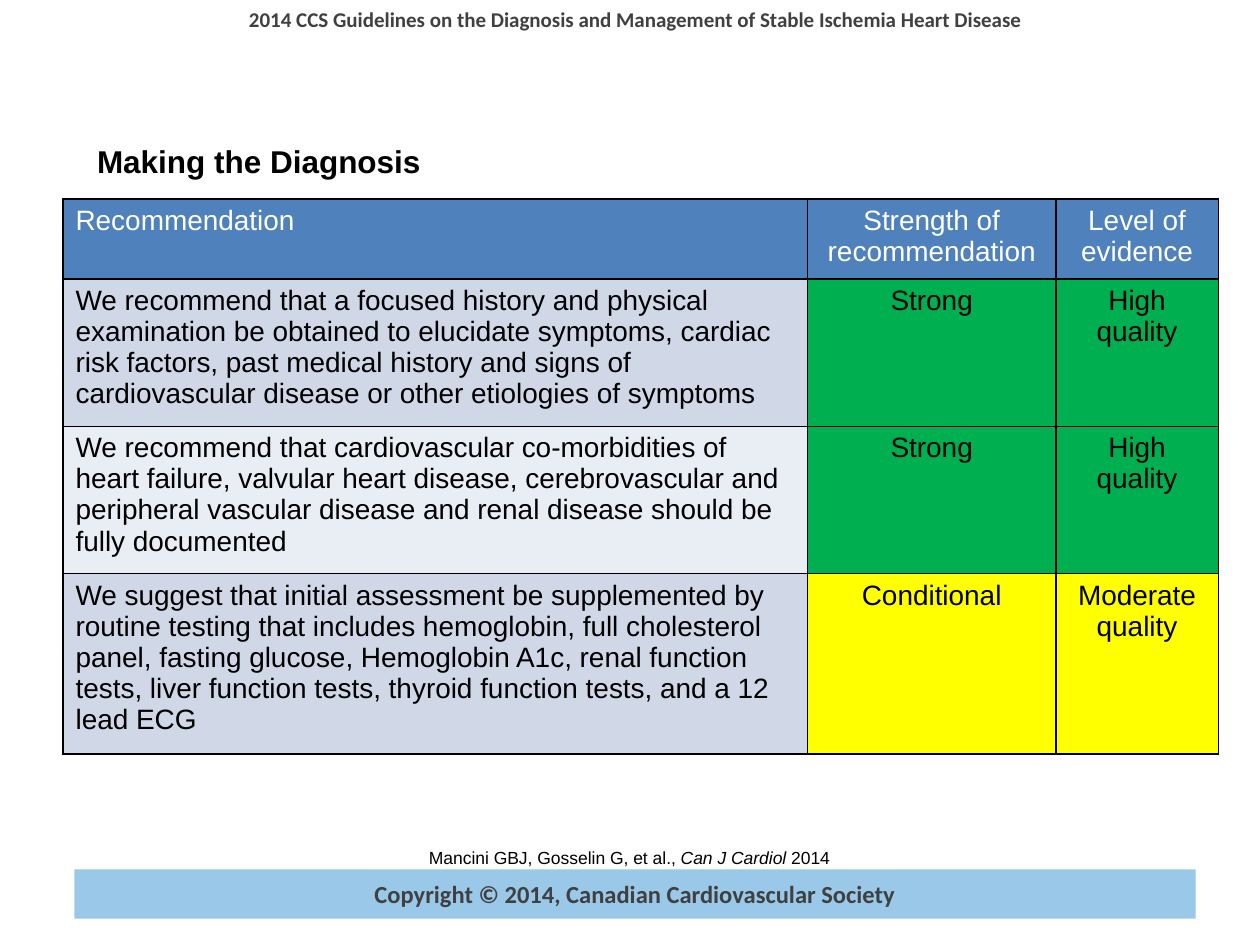
from dataclasses import dataclass

from lxml.etree import SubElement
from pptx import Presentation
from pptx.dml.color import RGBColor
from pptx.enum.shapes import MSO_SHAPE
from pptx.enum.text import MSO_ANCHOR, MSO_AUTO_SIZE, PP_ALIGN
from pptx.oxml.ns import qn
from pptx.util import Inches, Pt


@dataclass(frozen=True)
class Theme:
    body_font: str = "Arial"
    banner_font: str = "Calibri"
    black: str = "000000"
    white: str = "FFFFFF"
    grey: str = "404040"
    footer: str = "9AC8E9"
    header: str = "4F81BD"
    bands: tuple = ("D0D8E8", "E9EDF4")
    title_size: int = 18
    table_size: int = 16
    footer_size: int = 14
    banner_size: int = 12
    citation_size: int = 10


T = Theme()

BANNER = "2014 CCS Guidelines on the Diagnosis and Management of Stable Ischemia Heart Disease"
TITLE = "Making the Diagnosis"
CITATION = [("Mancini GBJ, Gosselin G, et al., ", False), ("Can J Cardiol", True), (" 2014", False)]
COPYRIGHT = "Copyright © 2014, Canadian Cardiovascular Society"

HEADER = ("Recommendation", "Strength of recommendation", "Level of evidence")
RECOMMENDATIONS = [
    ("We recommend that a focused history and physical examination be obtained to elucidate "
     "symptoms, cardiac risk factors, past medical history and signs of cardiovascular disease "
     "or other etiologies of symptoms", "Strong", "High quality"),
    ("We recommend that cardiovascular co-morbidities of heart failure, valvular heart disease, "
     "cerebrovascular and peripheral vascular disease and renal disease should be fully "
     "documented", "Strong", "High quality"),
    ("We suggest that initial assessment be supplemented by routine testing that includes "
     "hemoglobin, full cholesterol panel, fasting glucose, Hemoglobin A1c, renal function tests, "
     "liver function tests, thyroid function tests, and a 12 lead ECG",
     "Conditional", "Moderate quality"),
]
STRENGTH_FILLS = {"Strong": "00B050", "Conditional": "FFFF00"}
COL_WIDTHS = (5.91, 1.97, 1.29)
ROW_HEIGHTS = (0.63, 1.17, 1.17, 1.43)


def format_text(tf, size, color=T.black, font=T.body_font, bold=False, align=PP_ALIGN.LEFT):
    for p in tf.paragraphs:
        p.alignment = align
        for r in p.runs:
            r.font.name, r.font.size, r.font.bold = font, Pt(size), bold
            r.font.color.rgb = RGBColor.from_string(color)


def set_fill(target, color):
    target.fill.solid()
    target.fill.fore_color.rgb = RGBColor.from_string(color)


def add_text_box(s, box):
    tf = s.shapes.add_textbox(*map(Inches, box)).text_frame
    tf.word_wrap = True
    return tf


def add_borders(cell):
    """Line all four sides; borders must precede the fill in tcPr."""
    tc_pr = cell._tc.get_or_add_tcPr()
    for i, side in enumerate(("a:lnL", "a:lnR", "a:lnT", "a:lnB")):
        ln = SubElement(tc_pr, qn(side), w=str(Pt(1)))
        SubElement(SubElement(ln, qn("a:solidFill")), qn("a:srgbClr"), val=T.black)
        tc_pr.insert(i, ln)


def add_recommendations(s):
    rows = [HEADER, *RECOMMENDATIONS]
    size = (sum(COL_WIDTHS), sum(ROW_HEIGHTS))
    table = s.shapes.add_table(len(rows), len(HEADER), Inches(0.5), Inches(1.58),
                               *map(Inches, size)).table
    for col, width in zip(table.columns, COL_WIDTHS):
        col.width = Inches(width)
    for i, (values, height) in enumerate(zip(rows, ROW_HEIGHTS)):
        table.rows[i].height = Inches(height)
        for j, value in enumerate(values):
            cell = table.cell(i, j)
            cell.text_frame.text = value
            format_text(cell.text_frame, T.table_size, T.black if i else T.white,
                        align=PP_ALIGN.CENTER if j else PP_ALIGN.LEFT)
            if i == 0:
                fill = T.header
            elif j == 0:
                fill = T.bands[(i - 1) % 2]
            else:
                fill = STRENGTH_FILLS[values[1]]
            set_fill(cell, fill)
            add_borders(cell)


def main():
    prs = Presentation()
    prs.slide_width, prs.slide_height = Inches(10), Inches(7.5)
    s = prs.slides.add_slide(prs.slide_layouts[5])

    banner = add_text_box(s, (0.42, 0, 9.25, 0.61))
    banner.text = BANNER
    format_text(banner, T.banner_size, T.grey, T.banner_font, True, PP_ALIGN.CENTER)

    citation = add_text_box(s, (0.5, 6.67, 8.99, 0.44))
    for text, italic in CITATION:
        r = citation.paragraphs[0].add_run()
        r.text, r.font.italic = text, italic
    format_text(citation, T.citation_size, align=PP_ALIGN.CENTER)

    footer = s.shapes.add_shape(MSO_SHAPE.RECTANGLE, *map(Inches, (0.59, 6.9, 8.9, 0.39)))
    footer.shadow.inherit = False
    set_fill(footer, T.footer)
    footer.line.fill.background()
    footer.text_frame.text = COPYRIGHT
    footer.text_frame.vertical_anchor = MSO_ANCHOR.MIDDLE
    format_text(footer.text_frame, T.footer_size, T.grey, T.banner_font, True, PP_ALIGN.CENTER)

    add_recommendations(s)

    title = s.shapes.title
    title.left, title.top, title.width, title.height = map(Inches, (0.67, 1.08, 5.5, 0.4))
    tf = title.text_frame
    tf.text = TITLE
    tf.auto_size = MSO_AUTO_SIZE.NONE
    tf.vertical_anchor = MSO_ANCHOR.TOP
    format_text(tf, T.title_size, bold=True)

    prs.save("out.pptx")


if __name__ == "__main__":
    main()
